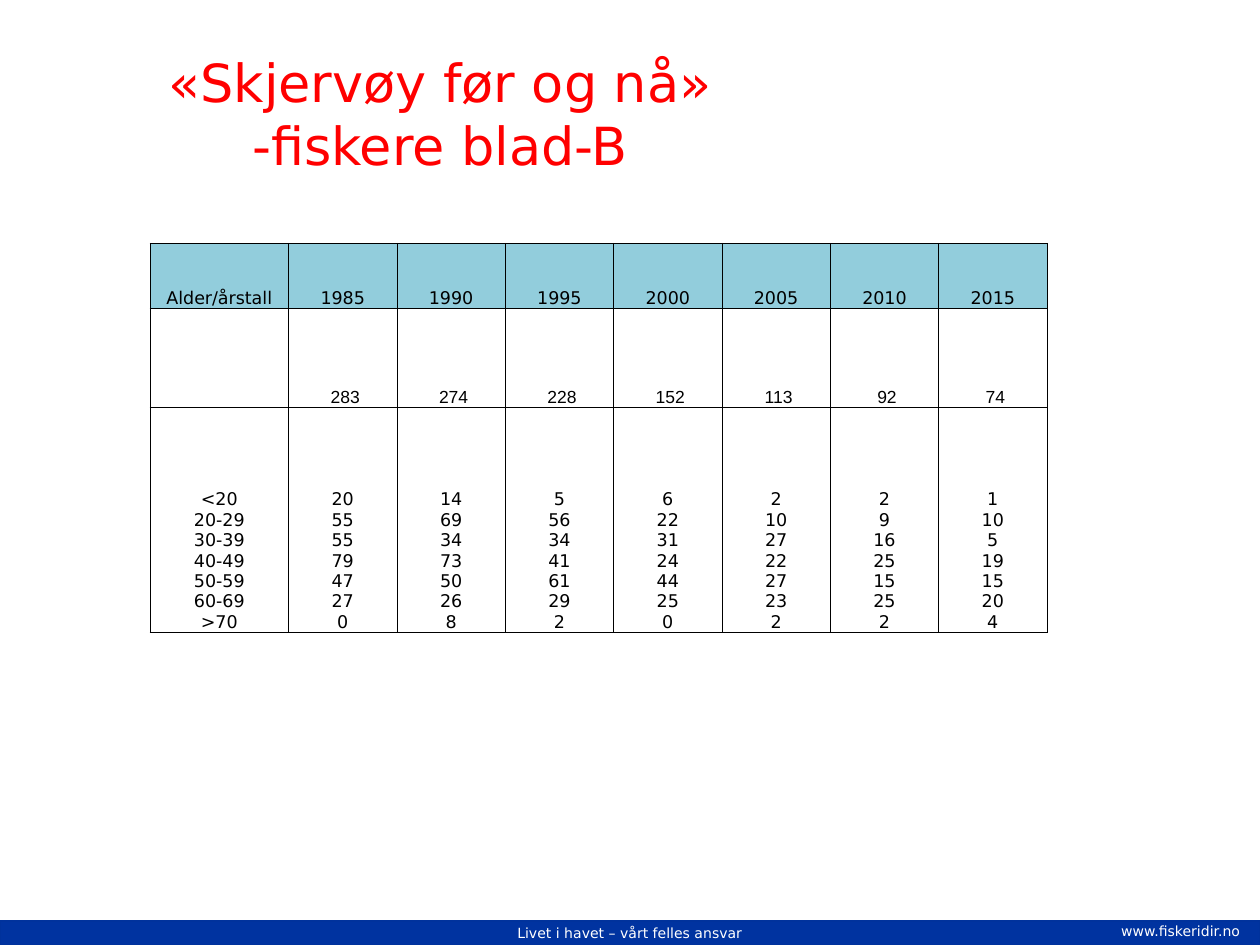
from lxml import etree
from pptx import Presentation
from pptx.dml.color import RGBColor
from pptx.enum.shapes import MSO_SHAPE
from pptx.enum.text import MSO_ANCHOR, PP_ALIGN
from pptx.oxml.ns import qn
from pptx.util import Inches, Pt

RECT = MSO_SHAPE.RECTANGLE
TOP, MIDDLE, BOTTOM = MSO_ANCHOR.TOP, MSO_ANCHOR.MIDDLE, MSO_ANCHOR.BOTTOM
LEFT, CENTER = PP_ALIGN.LEFT, PP_ALIGN.CENTER

COLORS = {
    "title": "FF0000",
    "text": "000000",
    "header": "92CDDC",
    "footer": "0033A0",
    "footer_line": "00329C",
    "white": "FFFFFF",
}
FONT = "DejaVu Sans"

YEARS = ["1985", "1990", "1995", "2000", "2005", "2010", "2015"]
TOTALS = ["283", "274", "228", "152", "113", "92", "74"]
AGES = ["<20", "20-29", "30-39", "40-49", "50-59", "60-69", ">70"]
FISHERS_BY_YEAR = [
    [20, 55, 55, 79, 47, 27, 0],
    [14, 69, 34, 73, 50, 26, 8],
    [5, 56, 34, 41, 61, 29, 2],
    [6, 22, 31, 24, 44, 25, 0],
    [2, 10, 27, 22, 27, 23, 2],
    [2, 9, 16, 25, 15, 25, 2],
    [1, 10, 5, 19, 15, 20, 4],
]
COL_WIDTHS = [1.1] + [0.86] * len(YEARS)
ROW_HEIGHTS = [0.52, 0.78, 1.79]


def rgb(name):
    return RGBColor.from_string(COLORS[name])


def write(tf, paragraphs, size=10, color="text", font=FONT, align=CENTER):
    """Fill a text frame; a newline inside a paragraph is a line break."""
    for i, text in enumerate(paragraphs):
        p = tf.paragraphs[0] if i == 0 else tf.add_paragraph()
        p.alignment = align
        for j, line in enumerate(text.split("\n")):
            if j:
                p.add_line_break()
            r = p.add_run()
            r.text = line
            r.font.size = Pt(size)
            r.font.name = font
            r.font.color.rgb = rgb(color)


def add_text(slide, x, y, w, h, text, anchor=TOP, wrap=True, **fmt):
    sp = slide.shapes.add_textbox(Inches(x), Inches(y), Inches(w), Inches(h))
    tf = sp.text_frame
    tf.word_wrap = wrap
    tf.vertical_anchor = anchor
    write(tf, [text], **fmt)


def add_footer_bar(slide, text):
    sp = slide.shapes.add_shape(RECT, 0, Inches(7.31), Inches(10), Inches(0.19))
    sp.shadow.inherit = False
    sp.fill.solid()
    sp.fill.fore_color.rgb = rgb("footer")
    sp.line.color.rgb = rgb("footer_line")
    sp.line.width = Pt(0.75)
    sp.text_frame.vertical_anchor = MIDDLE
    write(sp.text_frame, [text], size=8, color="white")


def set_borders(cell, width=0.5):
    tc_pr = cell._tc.get_or_add_tcPr()
    for i, side in enumerate(("a:lnL", "a:lnR", "a:lnT", "a:lnB")):
        ln = etree.Element(qn(side), w=str(Pt(width)))
        fill = etree.SubElement(ln, qn("a:solidFill"))
        etree.SubElement(fill, qn("a:srgbClr"), val=COLORS["text"])
        tc_pr.insert(i, ln)


def fill_cell(cell, paragraphs, fill=None, left=0.01, font=FONT):
    cell.margin_left = Inches(left)
    cell.margin_right = cell.margin_top = Inches(0.01)
    cell.margin_bottom = 0
    cell.vertical_anchor = BOTTOM
    if fill:
        cell.fill.solid()
        cell.fill.fore_color.rgb = rgb(fill)
    else:
        cell.fill.background()
    set_borders(cell)
    write(cell.text_frame, paragraphs, font=font)


def add_age_table(slide):
    shape = slide.shapes.add_table(
        len(ROW_HEIGHTS), len(COL_WIDTHS), Inches(1.19), Inches(1.93),
        Inches(sum(COL_WIDTHS)), Inches(sum(ROW_HEIGHTS)))
    table = shape.table
    table.first_row = table.horz_banding = False
    for col, width in zip(table.columns, COL_WIDTHS):
        col.width = Inches(width)
    for row, height in zip(table.rows, ROW_HEIGHTS):
        row.height = Inches(height)

    for c, year in enumerate(["Alder/årstall"] + YEARS):
        fill_cell(table.cell(0, c), [year], fill="header")
    for c, total in enumerate([""] + TOTALS):
        fill_cell(table.cell(1, c), [total], left=0.05, font="Arial")
    for c, counts in enumerate([AGES] + FISHERS_BY_YEAR):
        fill_cell(table.cell(2, c), [str(n) for n in counts])


def main():
    prs = Presentation()
    prs.slide_width, prs.slide_height = Inches(10), Inches(7.5)
    slide = prs.slides.add_slide(prs.slide_layouts[6])
    add_footer_bar(slide, "Livet i havet – vårt felles ansvar")
    add_text(slide, 8.8, 7.27, 1.2, 0.24, "www.fiskeridir.no",
             wrap=False, size=8, color="white", align=LEFT)
    add_text(slide, 0.48, 0.32, 6.03, 1.15, "«Skjervøy før og nå»\n-fiskere blad-B",
             anchor=MIDDLE, size=30, color="title")
    add_age_table(slide)
    prs.save("out.pptx")


if __name__ == "__main__":
    main()
